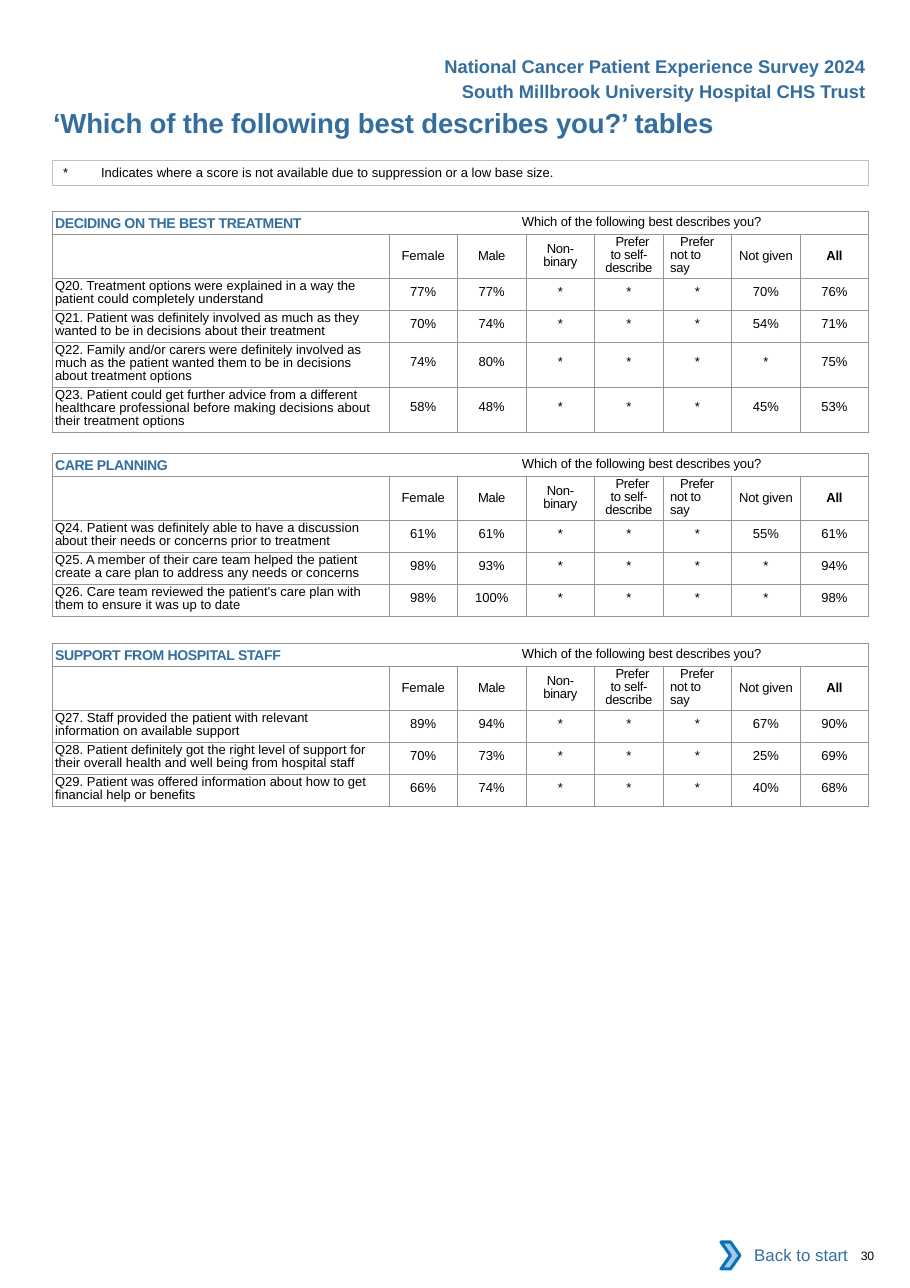
from dataclasses import dataclass

from lxml.etree import SubElement
from pptx import Presentation
from pptx.dml.color import RGBColor
from pptx.enum.shapes import MSO_SHAPE
from pptx.enum.text import MSO_ANCHOR, PP_ALIGN
from pptx.oxml import parse_xml
from pptx.oxml.ns import nsdecls, qn
from pptx.util import Pt

EMU_PER_PX = 8298
BLUE, BLACK, WHITE = "336E9F", "000000", "FFFFFF"
GRID, NOTE_EDGE = "939598", "BFBFBF"
ARROW_FILL, ARROW_EDGE = "A8C7E9", "0A74BB"
LEFT, WIDTH, QUESTION_WIDTH = 52, 817, 337
SECTION_ROW, HEADING_ROW = 23, 44
SECTION_QUESTION = "Which of the following best describes you?"


@dataclass
class Question:
    """One survey question with its scores by group."""
    text: str
    scores: str
    height: int = 32
    inset: int = 10


@dataclass
class Heading:
    """One score column heading and its insets."""
    text: str
    left: int = 0
    right: int = 0
    indent: int = 0
    align: PP_ALIGN = PP_ALIGN.CENTER
    spacing: float = 0
    bold: bool = False


HEADINGS = [
    Heading("Female"),
    Heading("Male", spacing=-0.2),
    Heading("Non- binary", 15, 15, spacing=-0.2),
    Heading("Prefer to self- describe", 10, 10, 7, spacing=-0.2),
    Heading("Prefer not to say", 7, 12, 10, PP_ALIGN.LEFT, -0.2),
    Heading("Not given", spacing=-0.1),
    Heading("All", spacing=-0.2, bold=True),
]

SECTIONS = [
    (211, "DECIDING ON THE BEST TREATMENT", [
        Question("Q20. Treatment options were explained in a way the patient could "
                 "completely understand", "77% 77% * * * 70% 76%"),
        Question("Q21. Patient was definitely involved as much as they wanted to be in "
                 "decisions about their treatment", "70% 74% * * * 54% 71%"),
        Question("Q22. Family and/or carers were definitely involved as much as the patient "
                 "wanted them to be in decisions about treatment options",
                 "74% 80% * * * * 75%", 45),
        Question("Q23. Patient could get further advice from a different healthcare "
                 "professional before making decisions about their treatment options",
                 "58% 48% * * * 45% 53%", 45),
    ]),
    (453, "CARE PLANNING", [
        Question("Q24. Patient was definitely able to have a discussion about their needs or "
                 "concerns prior to treatment", "61% 61% * * * 55% 61%"),
        Question("Q25. A member of their care team helped the patient create a care plan to "
                 "address any needs or concerns", "98% 93% * * * * 94%"),
        Question("Q26. Care team reviewed the patient's care plan with them to ensure it was "
                 "up to date", "98% 100% * * * * 98%"),
    ]),
    (643, "SUPPORT FROM HOSPITAL STAFF", [
        Question("Q27. Staff provided the patient with relevant information on available "
                 "support", "89% 94% * * * 67% 90%", inset=30),
        Question("Q28. Patient definitely got the right level of support for their overall "
                 "health and well being from hospital staff", "70% 73% * * * 25% 69%"),
        Question("Q29. Patient was offered information about how to get financial help or "
                 "benefits", "66% 74% * * * 40% 68%"),
    ]),
]


def px(length):
    """Turn px into EMU."""
    return length * EMU_PER_PX


def rgb(value):
    """Turn a hex string into a colour."""
    return RGBColor.from_string(value)


def style(font, size, color=BLACK, bold=False, spacing=0):
    """Set the font of a paragraph or run."""
    font.name, font.size, font.bold = "Arial", Pt(size), bold
    font.color.rgb = rgb(color)
    if spacing:
        font._rPr.set("spc", str(round(spacing * 100)))


def set_margins(holder, left=0, top=0, right=0, bottom=0):
    """Set the insets of a cell or text frame."""
    holder.margin_left, holder.margin_top = px(left), px(top)
    holder.margin_right, holder.margin_bottom = px(right), px(bottom)


def add_tab(paragraph, position):
    """Add a left tab stop."""
    tabs = SubElement(paragraph._p.get_or_add_pPr(), qn("a:tabLst"))
    SubElement(tabs, qn("a:tab"), pos=str(px(position)), algn="l")


def add_text(slide, box, text, size, color=BLACK, bold=False, spacing=0):
    """Add a text box without insets and return its frame."""
    frame = slide.shapes.add_textbox(*map(px, box)).text_frame
    frame.word_wrap = True
    set_margins(frame)
    paragraph = frame.paragraphs[0]
    paragraph.text = text
    style(paragraph.font, size, color, bold, spacing)
    return frame


def add_survey_line(slide, box, text):
    """Add a right-aligned line of the page header."""
    frame = add_text(slide, box, text, 12, BLUE, True)
    frame.word_wrap = False
    set_margins(frame, 11, 5, 11, 5)
    frame.paragraphs[0].alignment = PP_ALIGN.RIGHT


def add_block(shapes, preset, box, fill=None, line=None, line_width=0.5):
    """Add a preset shape with plain fill and line."""
    block = shapes.add_shape(preset, *map(px, box))
    block.shadow.inherit = False
    if fill:
        block.fill.solid()
        block.fill.fore_color.rgb = rgb(fill)
    else:
        block.fill.background()
    if line:
        block.line.color.rgb = rgb(line)
        block.line.width = Pt(line_width)
    else:
        block.line.fill.background()
    return block


def add_note(slide):
    """Add the framed note on suppressed scores."""
    frame = add_block(slide.shapes, MSO_SHAPE.RECTANGLE, (LEFT, 160, WIDTH - 1, 25),
                      line=NOTE_EDGE).text_frame
    frame.vertical_anchor = MSO_ANCHOR.TOP
    set_margins(frame, 11, 5, 0, 4)
    note = frame.paragraphs[0]
    note.text = "*\tIndicates where a score is not available due to suppression or a low base size."
    note.alignment = PP_ALIGN.LEFT
    add_tab(note, 38)
    style(note.font, 8.5)


def add_back_link(slide):
    """Add the grouped label and chevron at the foot."""
    link = slide.shapes.add_group_shape()
    label = add_block(link.shapes, MSO_SHAPE.RECTANGLE, (729, 1232, 130, 46), WHITE)
    label.text_frame.vertical_anchor = MSO_ANCHOR.MIDDLE
    wording = label.text_frame.paragraphs[0]
    wording.text = "Back to start"
    wording.alignment = PP_ALIGN.RIGHT
    style(wording.font, 11, BLUE)
    add_block(link.shapes, MSO_SHAPE.CHEVRON, (721, 1242, 19, 27), ARROW_FILL, ARROW_EDGE, 2)


def frame_cell(cell):
    """Clear the fill and draw all four borders."""
    cell.fill.background()
    set_margins(cell)
    style(cell.text_frame.paragraphs[0].font, 8.5)
    for position, side in enumerate("LRTB"):
        cell._tc.get_or_add_tcPr().insert(position, parse_xml(
            f'<a:ln{side} {nsdecls("a")} w="6350"><a:solidFill>'
            f'<a:srgbClr val="{GRID}"/></a:solidFill></a:ln{side}>'))


def fill_section_title(cell, title):
    """Write the section name and the shared column question."""
    set_margins(cell, 3)
    cell.vertical_anchor = MSO_ANCHOR.MIDDLE
    paragraph = cell.text_frame.paragraphs[0]
    paragraph.line_spacing = Pt(11.8)
    add_tab(paragraph, 467)
    name, prompt = paragraph.add_run(), paragraph.add_run()
    name.text, prompt.text = title + "\t", SECTION_QUESTION
    style(name.font, 15.8, BLUE, True, -0.2)
    name.font._rPr.set("baseline", "-8000")
    style(prompt.font, 8.5, spacing=-0.1)


def fill_cell(cell, text, align=PP_ALIGN.CENTER, bold=False, spacing=0, tight=False):
    """Write a heading, question or score."""
    paragraph = cell.text_frame.paragraphs[0]
    paragraph.text = text
    paragraph.alignment = align
    if tight:
        paragraph.line_spacing = Pt(8.6)
    style(paragraph.font, 8.5, bold=bold, spacing=spacing)
    return paragraph


def add_section(slide, top, title, questions):
    """Add the score table of one section."""
    heights = [SECTION_ROW, HEADING_ROW] + [question.height for question in questions]
    table = slide.shapes.add_table(len(heights), len(HEADINGS) + 1, px(LEFT), px(top),
                                   px(WIDTH), px(sum(heights))).table
    table.first_row = table.horz_banding = False
    for row, height in zip(table.rows, heights):
        row.height = px(height)
    for column in table.columns:
        column.width = px(WIDTH - QUESTION_WIDTH) // len(HEADINGS)
    table.columns[0].width = px(QUESTION_WIDTH)
    for cell in table.iter_cells():
        frame_cell(cell)
    table.cell(0, 0).merge(table.cell(0, len(HEADINGS)))
    fill_section_title(table.cell(0, 0), title)
    for column, heading in enumerate(HEADINGS, 1):
        cell = table.cell(1, column)
        cell.vertical_anchor = MSO_ANCHOR.MIDDLE
        set_margins(cell, heading.left, 0, heading.right)
        paragraph = fill_cell(cell, heading.text, heading.align, heading.bold,
                              heading.spacing, tight=heading.left > 0)
        paragraph._p.get_or_add_pPr().set("indent", str(px(heading.indent)))
    for row, question in enumerate(questions, 2):
        set_margins(table.cell(row, 0), 3, 2, question.inset)
        fill_cell(table.cell(row, 0), question.text, PP_ALIGN.LEFT, tight=True)
        for column, score in enumerate(question.scores.split(), 1):
            set_margins(table.cell(row, column), top=13 if question.height > 32 else 7)
            fill_cell(table.cell(row, column), score)


def main():
    """Build the page of survey tables."""
    deck = Presentation()
    deck.slide_width, deck.slide_height = px(910), px(1288)
    slide = deck.slides.add_slide(deck.slide_layouts[6])
    add_text(slide, (861, 1248, 45, 14), "30", 8, spacing=-0.2)
    add_text(slide, (53, 106, 700, 33), "‘Which of the following best describes you?’ tables",
             18, BLUE, True, -0.1)
    for section in SECTIONS:
        add_section(slide, *section)
    add_note(slide)
    add_survey_line(slide, (442, 75, 435, 33), "South Millbrook University Hospital CHS Trust")
    add_survey_line(slide, (432, 50, 445, 33), "National Cancer Patient Experience Survey 2024")
    add_back_link(slide)
    deck.save("out.pptx")


if __name__ == "__main__":
    main()
